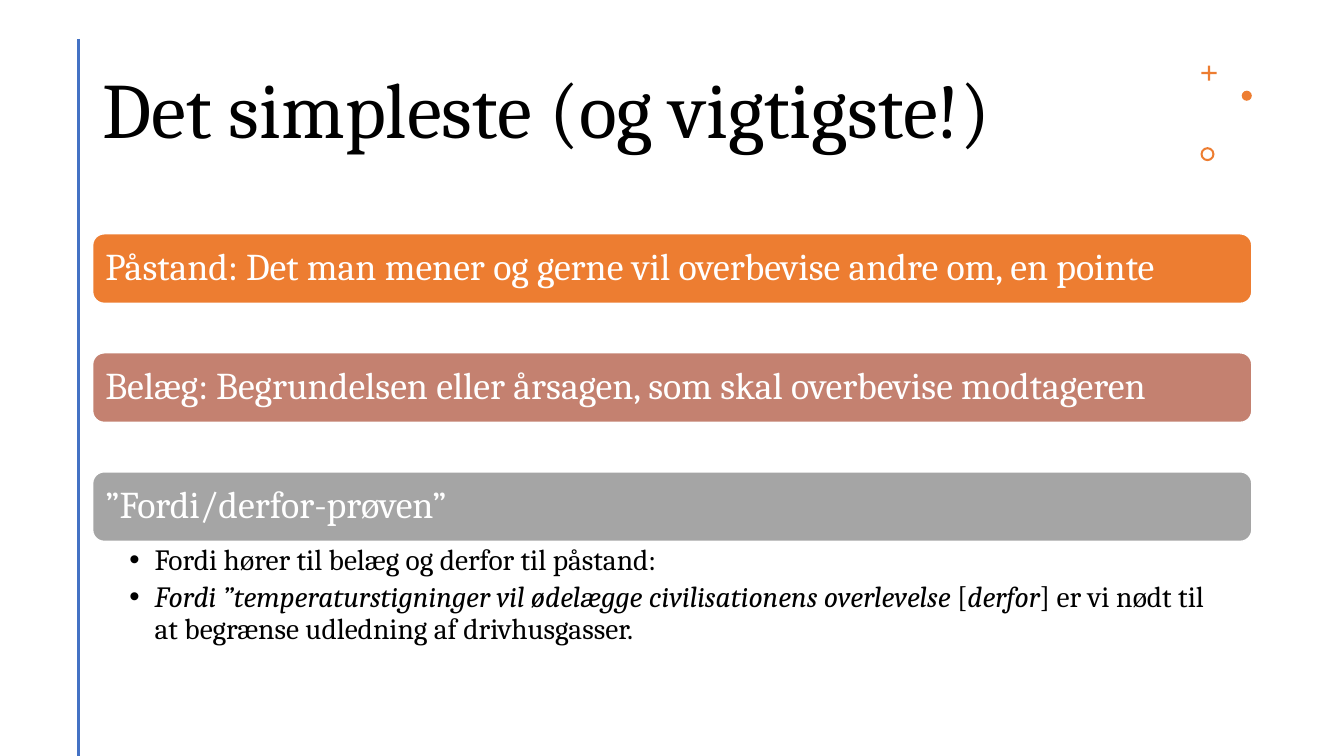
import pptx
import pptx.util
import pptx.dml.color
import pptx.enum.shapes
import pptx.enum.text
import pptx.oxml.ns
from lxml import etree

Pt = pptx.util.Pt
RGBColor = pptx.dml.color.RGBColor
SHAPE = pptx.enum.shapes.MSO_SHAPE
ANCHOR = pptx.enum.text.MSO_ANCHOR
ALIGN = pptx.enum.text.PP_ALIGN
qn = pptx.oxml.ns.qn

BLACK = RGBColor(0x00, 0x00, 0x00)
WHITE = RGBColor(0xFF, 0xFF, 0xFF)
BLUE = RGBColor(0x44, 0x72, 0xC4)
ORANGE = RGBColor(0xED, 0x7D, 0x31)
ROSE = RGBColor(0xC4, 0x81, 0x70)
GREY = RGBColor(0xA5, 0xA5, 0xA5)

FONT = "Cambria"
LEFT, WIDTH = 66.2, 828
BAR_TOP, BAR_HEIGHT, BAR_PITCH = 167, 49.7, 85

BARS = [
    ("Påstand: Det man mener og gerne vil overbevise andre om, en pointe", ORANGE),
    ("Belæg: Begrundelsen eller årsagen, som skal overbevise modtageren", ROSE),
    ("”Fordi/derfor-prøven”", GREY),
]
# Each bullet is a list of (text, italic) runs.
BULLETS = [
    [("Fordi hører til belæg og derfor til påstand:", False)],
    [
        ("Fordi ”temperaturstigninger vil ødelægge civilisationens overlevelse ", True),
        ("[", False),
        ("derfor", True),
        ("] er vi nødt til at begrænse udledning af drivhusgasser.", False),
    ],
]
ORNAMENTS = [
    (SHAPE.CROSS, 858.2, 46.8, 10.8, 0.43),
    (SHAPE.OVAL, 887, 64.8, 7.2, None),
    (SHAPE.DONUT, 857.5, 105.1, 10, 0.15),
]


def apply(target, values):
    for name, value in values.items():
        setattr(target, name, value)


def format_frame(tf, anchor, margins):
    left, top, right, bottom = map(Pt, margins)
    apply(tf, {
        "word_wrap": True, "vertical_anchor": anchor,
        "margin_left": left, "margin_top": top,
        "margin_right": right, "margin_bottom": bottom,
    })


def write_runs(p, runs, size, color):
    apply(p, {"alignment": ALIGN.LEFT, "line_spacing": 0.9})
    for text, italic in runs:
        r = p.add_run()
        r.text = text
        apply(r.font, {"name": FONT, "size": Pt(size), "italic": italic})
        r.font.color.rgb = color


def set_bullet(p, indent):
    pPr = p._p.get_or_add_pPr()
    pPr.set("marL", str(Pt(indent)))
    pPr.set("indent", str(-Pt(indent)))
    etree.SubElement(pPr, qn("a:buFont")).set("typeface", "Arial")
    etree.SubElement(pPr, qn("a:buChar")).set("char", "•")


def add_title(s, text):
    sp = s.shapes.add_textbox(Pt(LEFT), Pt(28.8), Pt(774.7), Pt(104.4))
    format_frame(sp.text_frame, ANCHOR.MIDDLE, (7.2, 3.6, 7.2, 3.6))
    write_runs(sp.text_frame.paragraphs[0], [(text, False)], 56, BLACK)


def add_side_line(s):
    x = Pt(56.2)
    line = s.shapes.add_connector(
        pptx.enum.shapes.MSO_CONNECTOR.STRAIGHT, x, Pt(27.8), x, Pt(540))
    line.line.color.rgb = BLUE
    line.line.width = Pt(2)
    etree.SubElement(line._element.spPr, qn("a:effectLst"))


def add_filled(s, kind, left, top, width, height, color):
    sp = s.shapes.add_shape(kind, Pt(left), Pt(top), Pt(width), Pt(height))
    sp.shadow.inherit = False
    sp.fill.solid()
    sp.fill.fore_color.rgb = color
    sp.line.fill.background()
    return sp


def add_ornament(s, kind, left, top, size, adjustment):
    sp = add_filled(s, kind, left, top, size, size, ORANGE)
    if adjustment is not None:
        sp.adjustments[0] = adjustment


def add_bar(s, top, text, color):
    sp = add_filled(s, SHAPE.ROUNDED_RECTANGLE, LEFT, top, WIDTH, BAR_HEIGHT, color)
    sp.line.color.rgb = WHITE
    sp.line.width = Pt(1)
    format_frame(sp.text_frame, ANCHOR.MIDDLE, (6.7, 4, 6.7, 4))
    write_runs(sp.text_frame.paragraphs[0], [(text, False)], 27, WHITE)


def add_bullets(s, top, bullets):
    sp = s.shapes.add_textbox(Pt(LEFT), Pt(top), Pt(WIDTH), Pt(77))
    tf = sp.text_frame
    format_frame(tf, ANCHOR.TOP, (26.3, 2.7, 14.9, 2.7))
    for i, runs in enumerate(bullets):
        p = tf.add_paragraph() if i else tf.paragraphs[0]
        set_bullet(p, 18)
        p.space_after = Pt(4)
        write_runs(p, runs, 21, BLACK)


def main():
    prs = pptx.Presentation()
    prs.slide_width, prs.slide_height = Pt(960), Pt(540)
    s = prs.slides.add_slide(prs.slide_layouts[6])
    add_title(s, "Det simpleste (og vigtigste!)")
    add_side_line(s)
    for ornament in ORNAMENTS:
        add_ornament(s, *ornament)
    for i, (text, color) in enumerate(BARS):
        add_bar(s, BAR_TOP + i * BAR_PITCH, text, color)
    last_bar_top = BAR_TOP + (len(BARS) - 1) * BAR_PITCH
    add_bullets(s, last_bar_top + BAR_HEIGHT, BULLETS)
    prs.save("out.pptx")


if __name__ == "__main__":
    main()
